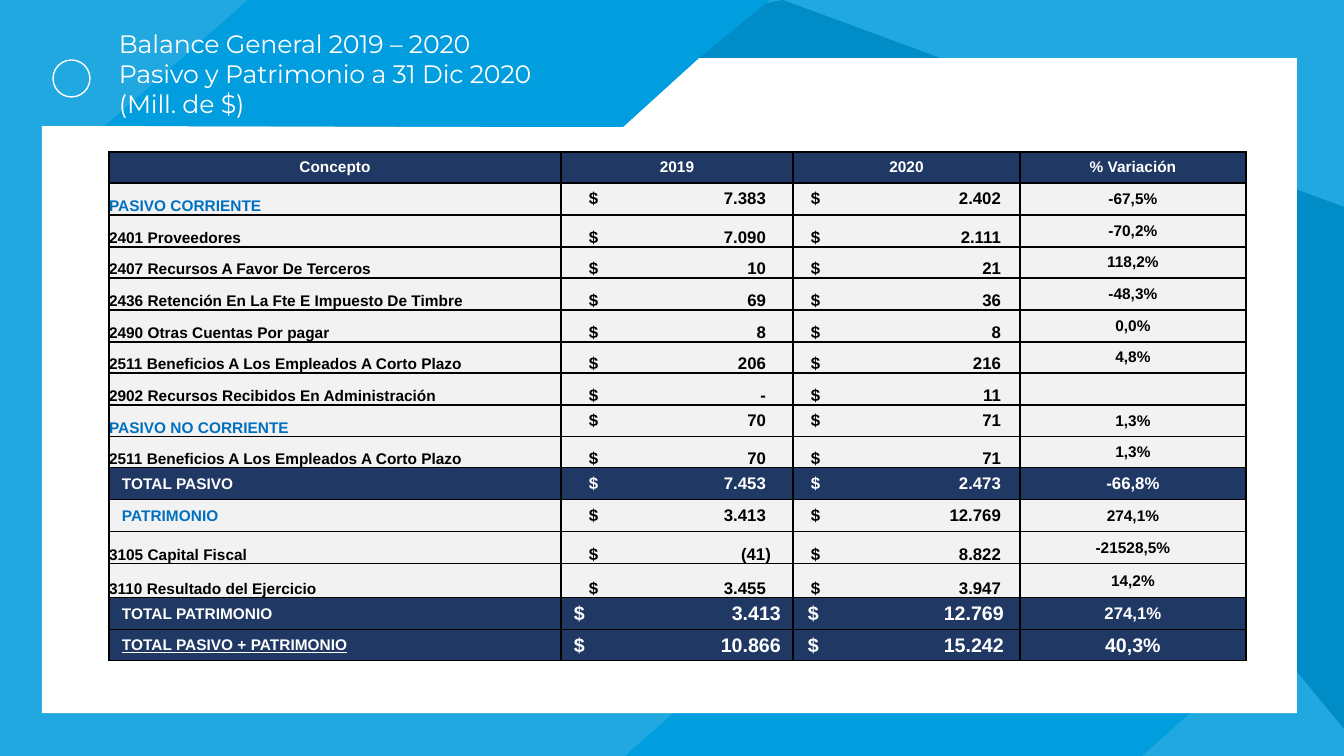
"""Builds a balance sheet slide: liabilities and equity, 2019 against 2020."""
from lxml import etree
from pptx import Presentation
from pptx.dml.color import RGBColor
from pptx.enum.shapes import MSO_SHAPE
from pptx.enum.text import MSO_ANCHOR, PP_ALIGN
from pptx.oxml.ns import qn
from pptx.util import Emu, Pt

OVAL = MSO_SHAPE.OVAL
TOP, MIDDLE, BOTTOM = MSO_ANCHOR.TOP, MSO_ANCHOR.MIDDLE, MSO_ANCHOR.BOTTOM
LEFT, CENTER, JUSTIFY = PP_ALIGN.LEFT, PP_ALIGN.CENTER, PP_ALIGN.JUSTIFY

WIDTH, HEIGHT = 1344, 756
PX = 12192000 / WIDTH
COLORS = {"sky": "21A8E0", "azure": "009DDF", "deep": "008CC6", "white": "FFFFFF",
          "navy": "203864", "pale": "F2F2F2", "accent": "0070C0", "black": "000000"}

TITLE = "Balance General 2019 – 2020\vPasivo y Patrimonio a 31 Dic 2020\v(Mill. de $)"
HEADINGS = ("Concepto", "2019", "2020", "% Variación")
ROWS = [
    ("section", "PASIVO CORRIENTE", "7.383", "2.402", "-67,5%"),
    ("account", "2401 Proveedores", "7.090", "2.111", "-70,2%"),
    ("account", "2407 Recursos A Favor De Terceros", "10", "21", "118,2%"),
    ("account", "2436 Retención En La Fte E Impuesto De Timbre", "69", "36", "-48,3%"),
    ("account", "2490 Otras Cuentas Por pagar", "8", "8", "0,0%"),
    ("account", "2511 Beneficios A Los Empleados A Corto Plazo", "206", "216", "4,8%"),
    ("account", "2902 Recursos Recibidos En Administración", "-", "11", ""),
    ("section", "PASIVO NO CORRIENTE", "70", "71", "1,3%"),
    ("account", "2511 Beneficios A Los Empleados A Corto Plazo", "70", "71", "1,3%"),
    ("total", "TOTAL PASIVO", "7.453", "2.473", "-66,8%"),
    ("equity", "PATRIMONIO", "3.413", "12.769", "274,1%"),
    ("account", "3105 Capital Fiscal", "(41)", "8.822", "-21528,5%"),
    ("account", "3110 Resultado del Ejercicio", "3.455", "3.947", "14,2%"),
    ("large total", "TOTAL PATRIMONIO", "3.413", "12.769", "274,1%"),
    ("grand total", "TOTAL PASIVO + PATRIMONIO", "10.866", "15.242", "40,3%"),
]
STYLE_FIELDS = ("fill", "label_color", "color", "label_anchor", "anchor",
                "indent", "money_size", "rate_size", "underline")
STYLES = {
    "section": ("pale", "accent", "black", BOTTOM, MIDDLE, 0, 12, 11, False),
    "account": ("pale", "black", "black", BOTTOM, BOTTOM, 0, 12, 11, False),
    "equity": ("pale", "accent", "black", MIDDLE, MIDDLE, 13, 12, 11, False),
    "total": ("navy", "white", "white", MIDDLE, MIDDLE, 13, 12, 12, False),
    "large total": ("navy", "white", "white", MIDDLE, MIDDLE, 13, 14, 12, False),
    "grand total": ("navy", "white", "white", MIDDLE, MIDDLE, 13, 14, 14, True),
}
MONEY_SPANS = {12: ((28, 177), (18, 190)), 14: ((13, 207), (15, 196))}

TABLE_LEFT, TABLE_TOP = 109, 152
COLUMN_WIDTHS = (452, 232, 227, 226)
ROW_HEIGHTS = [31, 32, 32] * 4 + [32, 34, 32, 31]

BACKDROP = [
    ("sky", [[(0, 0), (WIDTH, 0), (WIDTH, HEIGHT), (0, HEIGHT)]]),
    ("azure", [[(1289, 630), (767, 630), (625, 756), (1142, 756), (1218, 688)]]),
    ("deep", [[(783, 0), (105, 126), (1285, 657), (1344, 729), (1344, 207)]]),
    ("white", [[(42, 126), (42, 713), (1297, 713), (1297, 127), (623, 127)],
               [(1297, 58), (699, 58), (623, 127), (1297, 127)]]),
    ("azure", [[(770, 0), (248, 0), (105, 126), (623, 127), (699, 58)]]),
]


def px(length):
    return Emu(round(length * PX))


def rgb(name):
    return RGBColor.from_string(COLORS[name])


def write(frame, text, *, size, color, font="Arial", bold=True, underline=False,
          align=LEFT, tab=None, spacing=None):
    para = frame.paragraphs[0]
    para.alignment = align
    if tab:
        tabs = etree.SubElement(para._p.get_or_add_pPr(), qn("a:tabLst"))
        etree.SubElement(tabs, qn("a:tab"), pos=str(px(tab)), algn="r")
    para.text = text
    for span in para.runs:
        span.font.name = font
        span.font.size = Pt(size)
        span.font.bold = bold
        span.font.underline = underline
        span.font.color.rgb = rgb(color)
        if spacing:
            span._r.get_or_add_rPr().set("spc", str(spacing))


def add_polygon(page, color, contours):
    first, *others = contours
    builder = page.shapes.build_freeform(*first[0], scale=PX)
    builder.add_line_segments(first[1:])
    for contour in others:
        builder.move_to(*contour[0])
        builder.add_line_segments(contour[1:])
    shape = builder.convert_to_shape()
    shape.shadow.inherit = False
    shape.fill.solid()
    shape.fill.fore_color.rgb = rgb(color)
    shape.line.fill.background()


def prepare_cell(cell, fill, anchor, indent=0):
    properties = cell._tc.get_or_add_tcPr()
    for side in ("lnL", "lnR", "lnT", "lnB"):
        border = etree.SubElement(properties, qn("a:" + side), w=str(Pt(1)))
        paint = etree.SubElement(border, qn("a:solidFill"))
        etree.SubElement(paint, qn("a:srgbClr"), val=COLORS["black"])
    cell.fill.solid()
    cell.fill.fore_color.rgb = rgb(fill)
    cell.vertical_anchor = anchor
    cell.margin_left = px(indent)
    cell.margin_right = cell.margin_top = cell.margin_bottom = 0


def fill_row(cells, row):
    kind, label, *amounts, rate = row
    style = dict(zip(STYLE_FIELDS, STYLES[kind]))
    concept, *years, variation = cells
    prepare_cell(concept, style["fill"], style["label_anchor"], style["indent"])
    write(concept.text_frame, label, size=11, color=style["label_color"],
          underline=style["underline"], align=JUSTIFY)
    spans = MONEY_SPANS[style["money_size"]]
    for cell, amount, (indent, tab) in zip(years, amounts, spans):
        prepare_cell(cell, style["fill"], style["anchor"], indent)
        extra = 5 if amount.endswith(")") else 0
        write(cell.text_frame, f"$\t{amount}", size=style["money_size"],
              color=style["color"], tab=tab + extra)
    prepare_cell(variation, style["fill"], MIDDLE)
    write(variation.text_frame, rate, size=style["rate_size"], color=style["color"],
          align=CENTER)


def add_balance(page):
    frame = page.shapes.add_table(len(ROW_HEIGHTS), len(COLUMN_WIDTHS), px(TABLE_LEFT),
                                  px(TABLE_TOP), px(sum(COLUMN_WIDTHS)), px(sum(ROW_HEIGHTS)))
    table = frame.table
    table.first_row = table.horz_banding = False
    for column, width in zip(table.columns, COLUMN_WIDTHS):
        column.width = px(width)
    for line, height in zip(table.rows, ROW_HEIGHTS):
        line.height = px(height)
    header, *body = table.rows
    for cell, heading in zip(header.cells, HEADINGS):
        prepare_cell(cell, "navy", MIDDLE)
        write(cell.text_frame, heading, size=11, color="white", align=CENTER)
    for line, row in zip(body, ROWS):
        fill_row(line.cells, row)


def main():
    deck = Presentation()
    deck.slide_width, deck.slide_height = px(WIDTH), px(HEIGHT)
    page = deck.slides.add_slide(deck.slide_layouts[6])
    for color, contours in BACKDROP:
        add_polygon(page, color, contours)
    ring = page.shapes.add_shape(OVAL, px(53), px(60), px(37), px(37))
    ring.shadow.inherit = False
    ring.fill.background()
    ring.line.color.rgb = rgb("white")
    ring.line.width = Pt(1)
    box = page.shapes.add_textbox(px(109), px(23), px(672), px(102))
    box.text_frame.word_wrap = True
    box.text_frame.vertical_anchor = TOP
    write(box.text_frame, TITLE, size=18, color="white", font="Montserrat",
          bold=False, spacing=-10)
    add_balance(page)
    deck.save("out.pptx")


if __name__ == "__main__":
    main()
